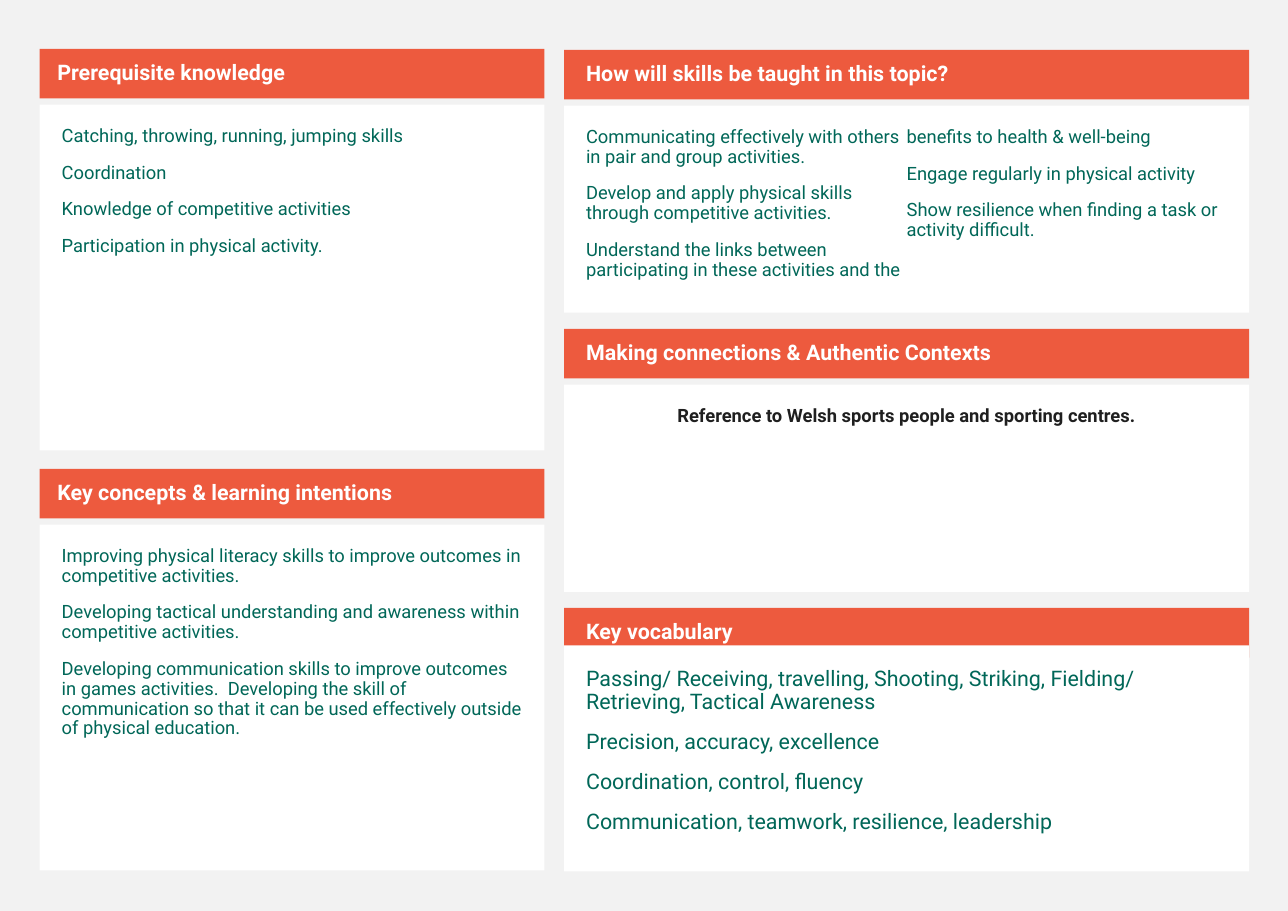
from dataclasses import dataclass

import pptx
import pptx.dml.color
import pptx.enum.shapes
import pptx.enum.text
import pptx.slide
import pptx.util

Pt = pptx.util.Pt
RGB = pptx.dml.color.RGBColor.from_string
Align = pptx.enum.text.PP_ALIGN
Anchor = pptx.enum.text.MSO_ANCHOR


@dataclass(frozen=True)
class Theme:
    font: str = "Roboto"
    page: str = "F2F2F2"
    header: str = "ED5A3E"
    body: str = "FFFFFF"
    title_text: str = "FFFFFF"
    body_text: str = "006758"
    strong_text: str = "1F1F1F"
    title_size: float = 14
    body_size: float = 12
    vocabulary_size: float = 14
    line_spacing: float = 0.9
    space_before: float = 11


@dataclass(frozen=True)
class Column:
    left: float
    width: float
    title_inset: float


@dataclass(frozen=True)
class TextStyle:
    size: float
    color: str
    bold: bool = False
    align: Align = Align.LEFT


@dataclass(frozen=True)
class Panel:
    column: Column
    top: float
    body_height: float
    title: str
    paragraphs: tuple[str, ...]
    style: TextStyle
    body_offset: float = 36.4
    text_columns: int = 1


THEME = Theme()
HEADER_HEIGHT = 32.4
BODY_INSETS = (14.4, 14.4, 14.4, 14.4)

LEFT = Column(25.9, 329.8, 11.5)
RIGHT = Column(368.6, 447.8, 14.4)

TITLE = TextStyle(THEME.title_size, THEME.title_text, bold=True)
BODY = TextStyle(THEME.body_size, THEME.body_text)
VOCABULARY = TextStyle(THEME.vocabulary_size, THEME.body_text)
STRONG = TextStyle(THEME.body_size, THEME.strong_text, bold=True, align=Align.CENTER)

# Some phrases hold no-break spaces that keep their words on one line
PANELS = (
    Panel(LEFT, 32, 226.1, "Prerequisite knowledge", (
        "Catching, throwing, running, jumping skills",
        "Coordination",
        "Knowledge of competitive activities",
        "Participation in physical activity.",
    ), BODY),
    Panel(LEFT, 306.5, 226.1, "Key concepts & learning intentions", (
        "Improving physical literacy skills to improve outcomes in competitive activities.",
        "Developing tactical understanding and awareness within competitive activities.",
        "Developing communication skills to improve outcomes in games activities.  "
        "Developing the skill of communication so that it can be used effectively "
        "outside of physical education.",
    ), BODY),
    Panel(RIGHT, 32.6, 135.4, "How will skills be taught in this topic?", (
        "Communicating effectively with others in pair and group activities.",
        "Develop and apply physical skills through competitive activities.",
        "Understand the links between participating in these activities and the "
        "benefits to health & well-being",
        "Engage regularly in physical activity",
        "Show resilience when finding a task or activity difficult.",
    ), BODY, text_columns=2),
    Panel(RIGHT, 215, 135.4, "Making connections & Authentic Contexts", (
        "Reference to Welsh sports people and sporting centres.",
    ), STRONG),
    Panel(RIGHT, 397.4, 147.6, "Key vocabulary", (
        "Passing/ Receiving, travelling, Shooting, Striking, Fielding/ "
        "Retrieving, Tactical Awareness",
        "Precision, accuracy, excellence",
        "Coordination, control, fluency",
        "Communication, teamwork, resilience, leadership",
    ), VOCABULARY, body_offset=24.5),
)


def add_box(s: pptx.slide.Slide, column: Column, top: float, height: float, fill: str,
            insets: tuple[float, ...], anchor: Anchor, paragraphs: tuple[str, ...],
            style: TextStyle, text_columns: int = 1) -> None:
    """Draw a filled rectangle with its paragraphs."""
    sp = s.shapes.add_shape(pptx.enum.shapes.MSO_SHAPE.RECTANGLE, Pt(column.left),
                            Pt(top), Pt(column.width), Pt(height))
    sp.shadow.inherit = False
    sp.fill.solid()
    sp.fill.fore_color.rgb = RGB(fill)
    sp.line.fill.background()

    tf = sp.text_frame
    tf.word_wrap = True
    tf.vertical_anchor = anchor
    tf.margin_left, tf.margin_top, tf.margin_right, tf.margin_bottom = map(Pt, insets)
    if text_columns > 1:
        sp.element.txBody.bodyPr.set("numCol", str(text_columns))

    for i, text in enumerate(paragraphs):
        p = tf.add_paragraph() if i else tf.paragraphs[0]
        p.alignment = style.align
        p.line_spacing = THEME.line_spacing
        p.space_before = Pt(THEME.space_before)
        r = p.add_run()
        r.text = text
        r.font.name = THEME.font
        r.font.size = Pt(style.size)
        r.font.bold = style.bold
        r.font.color.rgb = RGB(style.color)


def add_panel(s: pptx.slide.Slide, panel: Panel) -> None:
    """Draw a header bar and the text box below it."""
    add_box(s, panel.column, panel.top, HEADER_HEIGHT, THEME.header,
            (panel.column.title_inset, 3.6, 7.2, 3.6), Anchor.MIDDLE,
            (panel.title,), TITLE)
    add_box(s, panel.column, panel.top + panel.body_offset, panel.body_height,
            THEME.body, BODY_INSETS, Anchor.TOP, panel.paragraphs, panel.style,
            panel.text_columns)


def main() -> None:
    # Page
    prs = pptx.Presentation()
    prs.slide_width, prs.slide_height = Pt(841.68), Pt(595.44)
    s = prs.slides.add_slide(prs.slide_layouts[6])
    s.background.fill.solid()
    s.background.fill.fore_color.rgb = RGB(THEME.page)

    # Panels
    for panel in PANELS:
        add_panel(s, panel)

    prs.save("out.pptx")


if __name__ == "__main__":
    main()
